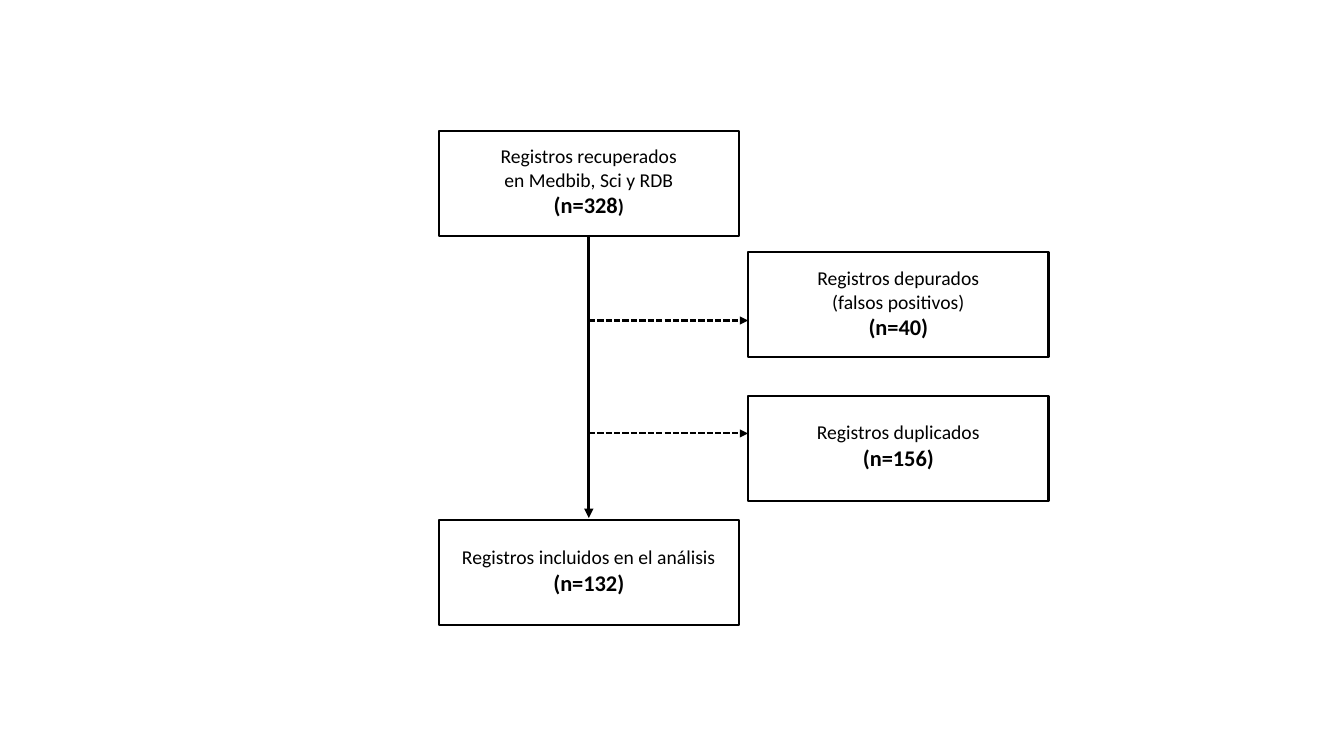
"""Build a flow chart of how literature records were screened."""
from dataclasses import dataclass

from lxml import etree
from pptx import Presentation
from pptx.dml.color import RGBColor
from pptx.enum.dml import MSO_LINE
from pptx.enum.shapes import MSO_CONNECTOR, MSO_SHAPE
from pptx.enum.text import MSO_AUTO_SIZE, PP_ALIGN
from pptx.oxml.ns import qn
from pptx.slide import Slide
from pptx.util import Inches, Pt

RECTANGLE = MSO_SHAPE.RECTANGLE
STRAIGHT = MSO_CONNECTOR.STRAIGHT
CENTER = PP_ALIGN.CENTER
FIT_SHAPE = MSO_AUTO_SIZE.SHAPE_TO_FIT_TEXT
SYS_DASH = MSO_LINE.SQUARE_DOT

COLORS = {"paper": "FFFFFF", "ink": "000000"}
FONT = "Calibri"
LABEL_SIZE, COUNT_SIZE = 14, 16
BOX_WIDTH, BOX_HEIGHT = 2.98, 1.04
MAIN_LEFT, SIDE_LEFT = 4.35, 7.42
MAIN_AXIS = MAIN_LEFT + BOX_WIDTH / 2


@dataclass(frozen=True)
class Step:
    left: float
    top: float
    text_top: float
    text_height: float
    labels: tuple[str, ...]
    count: int
    closing_size: int = COUNT_SIZE


@dataclass(frozen=True)
class Arrow:
    start: tuple[float, float]
    end: tuple[float, float]
    weight: float
    dashed: bool = False


STEPS = (
    Step(MAIN_LEFT, 1.3, 1.38, 0.84,
         ("Registros recuperados", "en Medbib, Sci y RDB"), 328, LABEL_SIZE),
    Step(SIDE_LEFT, 2.5, 2.59, 0.84,
         ("Registros depurados", "(falsos positivos)"), 40),
    Step(SIDE_LEFT, 3.93, 4.12, 0.61, ("Registros duplicados",), 156),
    Step(MAIN_LEFT, 5.16, 5.36, 0.61,
         ("Registros incluidos en el análisis",), 132),
)
ARROWS = (
    Arrow((MAIN_AXIS, 2.33), (MAIN_AXIS, 5.14), 2.25),
    *(Arrow((MAIN_AXIS, y), (SIDE_LEFT, y), 1.5, dashed=True)
      for y in (3.18, 4.3)),
)


def color(name: str) -> RGBColor:
    return RGBColor.from_string(COLORS[name])


def add_span(para, text: str, *, size: float, bold: bool = False) -> None:
    span = para.add_run()
    span.text = text
    span.font.name = FONT
    span.font.size = Pt(size)
    span.font.bold = bold
    span.font.color.rgb = color("ink")


def draw_step(page: Slide, step: Step) -> None:
    box = page.shapes.add_shape(
        RECTANGLE, Inches(step.left), Inches(step.top),
        Inches(BOX_WIDTH), Inches(BOX_HEIGHT))
    box.shadow.inherit = False
    box.fill.solid()
    box.fill.fore_color.rgb = color("paper")
    box.line.color.rgb = color("ink")
    box.line.width = Pt(1.5)

    caption = page.shapes.add_textbox(
        Inches(step.left), Inches(step.text_top),
        Inches(BOX_WIDTH), Inches(step.text_height))
    frame = caption.text_frame
    frame.word_wrap = True
    frame.auto_size = FIT_SHAPE
    para = frame.paragraphs[0]
    for label in step.labels:
        para.alignment = CENTER
        add_span(para, label, size=LABEL_SIZE)
        para = frame.add_paragraph()
    para.alignment = CENTER
    add_span(para, f"(n={step.count}", size=COUNT_SIZE, bold=True)
    add_span(para, ")", size=step.closing_size, bold=True)


def draw_arrow(page: Slide, arrow: Arrow) -> None:
    connector = page.shapes.add_connector(
        STRAIGHT, *(Inches(value) for value in arrow.start + arrow.end))
    connector.line.color.rgb = color("ink")
    connector.line.width = Pt(arrow.weight)
    if arrow.dashed:
        connector.line.dash_style = SYS_DASH
    properties = connector.element.spPr
    etree.SubElement(properties.find(qn("a:ln")), qn("a:tailEnd"),
                     type="triangle")
    etree.SubElement(properties, qn("a:effectLst"))


def main() -> None:
    deck = Presentation()
    deck.slide_width, deck.slide_height = Inches(13.33), Inches(7.5)
    page = deck.slides.add_slide(deck.slide_layouts[6])
    for step in STEPS:
        draw_step(page, step)
    for arrow in ARROWS:
        draw_arrow(page, arrow)
    deck.save("out.pptx")


if __name__ == "__main__":
    main()
